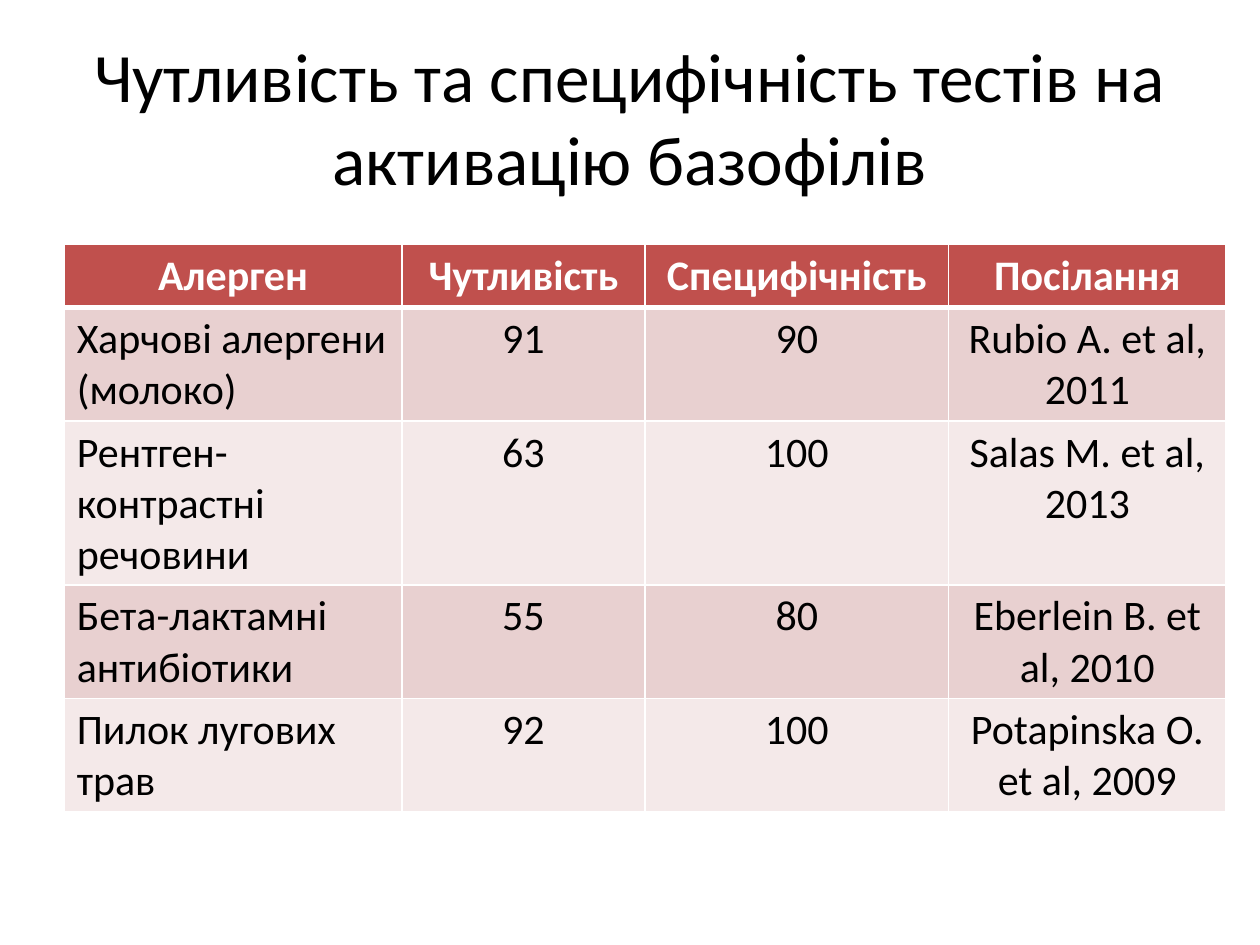
import pptx
import pptx.util
import pptx.dml.color
import pptx.enum.text
import pptx.oxml
import pptx.oxml.ns

WIDTH, HEIGHT = 10, 7.5
FONT = "Calibri"
BLACK, WHITE = "000000", "FFFFFF"
HEADER_FILL = "C0504D"
BAND_FILLS = ("E8D0D0", "F4E9E9")
COLUMN_WIDTHS = (2.68, 1.93, 2.41, 2.2)
ROW_HEIGHT = 0.41  # least height; rows grow with their text
ROWS = (
    ("Алерген", "Чутливість", "Специфічність", "Посілання"),
    ("Харчові алергени (молоко)", "91", "90", "Rubio A. et al, 2011"),
    ("Рентген-контрастні речовини", "63", "100", "Salas M. et al, 2013"),
    ("Бета-лактамні антибіотики", "55", "80", "Eberlein B. et al, 2010"),
    ("Пилок лугових трав", "92", "100", "Potapinska O. et al, 2009"),
)
ALIGN = pptx.enum.text.PP_ALIGN


def color(value):
    return pptx.dml.color.RGBColor.from_string(value)


def inches(*lengths):
    return [pptx.util.Inches(length) for length in lengths]


def write(frame, text, size, ink, align=ALIGN.CENTER, bold=False):
    para = frame.paragraphs[0]
    para.text = text
    para.alignment = align
    para.font.name = FONT
    para.font.size = pptx.util.Pt(size)
    para.font.bold = bold
    para.font.color.rgb = color(ink)


def set_borders(cell, bottom):
    properties = cell._tc.get_or_add_tcPr()
    sides = (("lnL", 1), ("lnR", 1), ("lnT", 1), ("lnB", bottom))
    for index, (side, points) in enumerate(sides):
        line = pptx.oxml.parse_xml(
            f'<a:{side} {pptx.oxml.ns.nsdecls("a")} w="{pptx.util.Pt(points)}">'
            f'<a:solidFill><a:srgbClr val="{WHITE}"/></a:solidFill></a:{side}>')
        properties.insert(index, line)


def add_title(page, left, top, width, height):
    box = page.shapes.add_textbox(*inches(left, top, width, height))
    frame = box.text_frame
    frame.word_wrap = True
    frame.vertical_anchor = pptx.enum.text.MSO_ANCHOR.MIDDLE
    write(frame, "Чутливість та специфічність тестів на активацію базофілів",
          39.6, BLACK)


def add_results(page, left, top):
    size = sum(COLUMN_WIDTHS), ROW_HEIGHT * len(ROWS)
    table = page.shapes.add_table(
        len(ROWS), len(COLUMN_WIDTHS), *inches(left, top, *size)).table
    for column, width in zip(table.columns, COLUMN_WIDTHS):
        column.width = pptx.util.Inches(width)

    for row, texts in enumerate(ROWS):
        header = row == 0
        fill = HEADER_FILL if header else BAND_FILLS[(row - 1) % 2]
        for column, text in enumerate(texts):
            cell = table.cell(row, column)
            cell.fill.solid()
            cell.fill.fore_color.rgb = color(fill)
            set_borders(cell, bottom=3 if header else 1)
            # Allergen names are left-aligned, all else is centred
            align = ALIGN.LEFT if column == 0 and not header else ALIGN.CENTER
            write(cell.text_frame, text, 24, WHITE if header else BLACK,
                  align, header)


def main():
    deck = pptx.Presentation()
    deck.slide_width, deck.slide_height = inches(WIDTH, HEIGHT)
    page = deck.slides.add_slide(deck.slide_layouts[6])
    add_title(page, WIDTH * 0.05, HEIGHT * 0.04, WIDTH * 0.9, HEIGHT / 6)
    add_results(page, 0.51, 1.94)
    deck.save("out.pptx")


if __name__ == "__main__":
    main()
